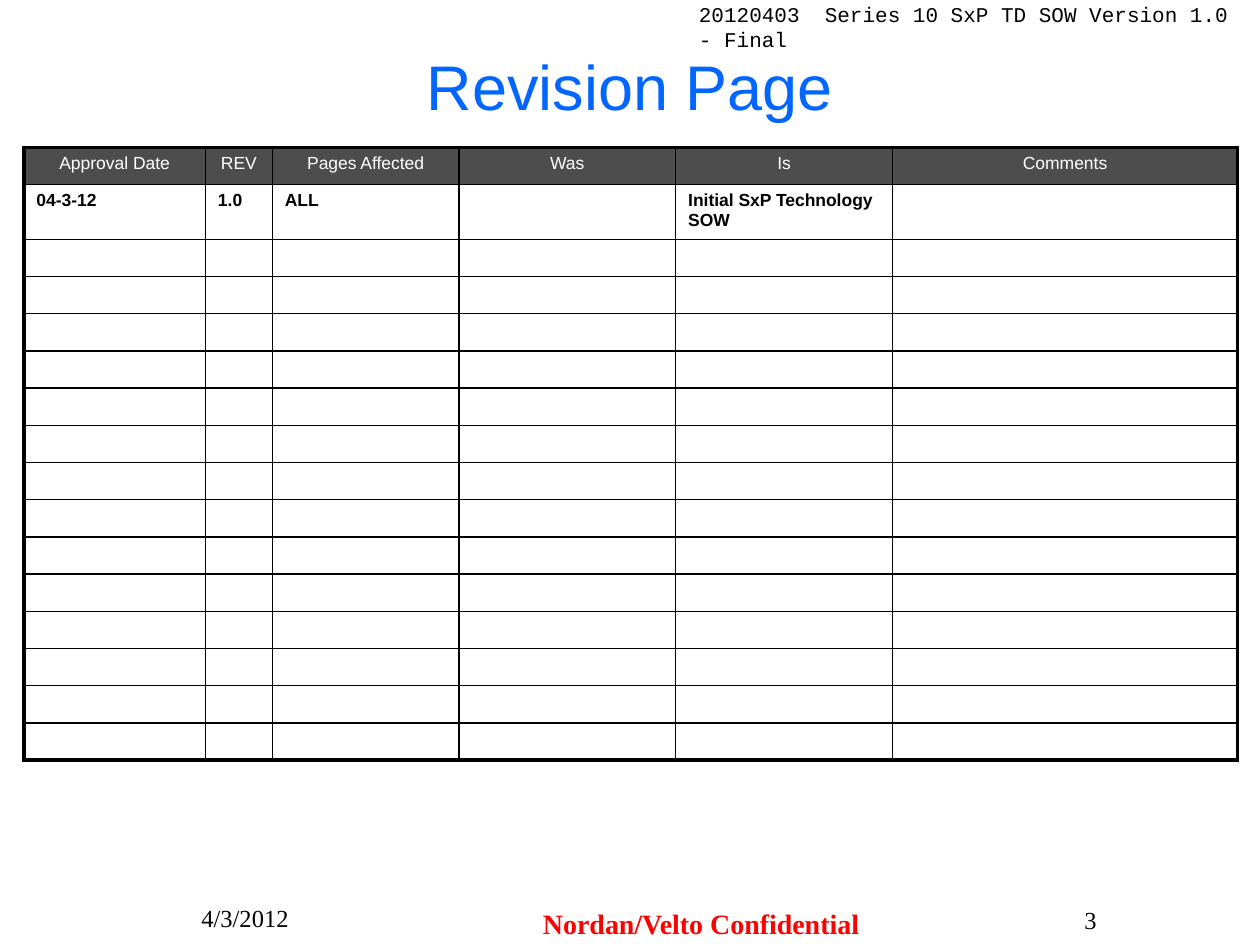
from dataclasses import dataclass

from lxml.etree import SubElement
from pptx import Presentation
from pptx.dml.color import RGBColor as Color
from pptx.enum.text import MSO_ANCHOR as Anchor, PP_ALIGN as Align
from pptx.oxml.ns import qn
from pptx.util import Cm, Pt


@dataclass(frozen=True)
class Theme:
    """Colours, fonts and type sizes of the deck."""

    black: str = "000000"
    white: str = "FFFFFF"
    blue: str = "0066FF"
    red: str = "FF0000"
    grey: str = "4D4D4D"
    sans: str = "Arial"
    serif: str = "Times New Roman"
    mono: str = "Courier New"
    title: int = 36
    notice: int = 16
    footer: int = 14
    header: int = 12
    cell: int = 10
    frame_line: float = 2.25
    grid_line: float = 1


THEME = Theme()
COLUMN_WIDTHS = [3.66, 1.35, 3.76, 4.37, 4.37, 6.96]
HEADINGS = ["Approval Date", "REV", "Pages Affected", "Was", "Is", "Comments"]
REVISION = ["04-3-12", "1.0", "ALL", "", "Initial SxP Technology SOW", ""]
BLANK_ROWS = 14
ROW_HEIGHT = 0.75
REVISION_HEIGHT = 1.06


def write(frame, text, size, name, color, align=Align.LEFT, bold=False):
    """Put one formatted paragraph in a text frame."""
    para = frame.paragraphs[0]
    para.alignment = align
    span = para.add_run()
    span.text = text
    for key, value in {"size": Pt(size), "name": name, "bold": bold}.items():
        setattr(span.font, key, value)
    span.font.color.rgb = Color.from_string(color)


def add_text(page, place, text, size, name, color, **format_values):
    """Add a wrapped text box at left, top, width, height in centimetres."""
    box = page.shapes.add_textbox(*map(Cm, place))
    box.text_frame.word_wrap = True
    write(box.text_frame, text, size, name, color, **format_values)


def set_title(page, text):
    """Place and format the title placeholder."""
    title = page.shapes.title
    place = {"left": 1.27, "top": 0.76, "width": 22.86, "height": 1.9}
    for key, value in place.items():
        setattr(title, key, Cm(value))
    title.text_frame.vertical_anchor = Anchor.MIDDLE
    write(title.text_frame, text, THEME.title, THEME.sans, THEME.blue, Align.CENTER)


def set_borders(cell, outer_sides):
    """Draw the cell's four borders, heavier on the table's outer sides."""
    properties = cell._tc.get_or_add_tcPr()
    for index, side in enumerate("LRTB"):
        points = THEME.frame_line if side in outer_sides else THEME.grid_line
        line = SubElement(properties, qn(f"a:ln{side}"), w=str(Pt(points)))
        fill = SubElement(line, qn("a:solidFill"))
        SubElement(fill, qn("a:srgbClr"), val=THEME.black)
        properties.insert(index, line)


def fill_cell(cell, text, is_heading):
    """Set the fill and the text of one cell."""
    cell.fill.solid()
    cell.fill.fore_color.rgb = Color.from_string(THEME.grey if is_heading else THEME.white)
    if text:
        write(
            cell.text_frame, text, THEME.cell, THEME.sans,
            THEME.white if is_heading else THEME.black,
            Align.CENTER if is_heading else Align.LEFT, not is_heading,
        )
    else:
        para = cell.text_frame.paragraphs[0]
        SubElement(para._p, qn("a:endParaRPr"), sz=str(THEME.cell * 100))


def add_revision_table(page):
    """Add the revision history with its blank rows."""
    rows = [HEADINGS, REVISION] + [[""] * len(HEADINGS)] * BLANK_ROWS
    heights = [ROW_HEIGHT, REVISION_HEIGHT] + [ROW_HEIGHT] * BLANK_ROWS
    place = (0.48, 2.97, sum(COLUMN_WIDTHS), sum(heights))
    table = page.shapes.add_table(len(rows), len(HEADINGS), *map(Cm, place)).table
    table.first_row = table.horz_banding = False
    for column, width in zip(table.columns, COLUMN_WIDTHS):
        column.width = Cm(width)
    for row, height in zip(table.rows, heights):
        row.height = Cm(height)
    last_row, last_column = len(rows) - 1, len(HEADINGS) - 1
    for r, texts in enumerate(rows):
        for c, text in enumerate(texts):
            cell = table.cell(r, c)
            fill_cell(cell, text, r == 0)
            edges = {"L": c == 0, "R": c == last_column, "T": r == 0, "B": r == last_row}
            set_borders(cell, [side for side, outer in edges.items() if outer])


def main():
    """Build and save the revision page."""
    deck = Presentation()
    deck.slide_width, deck.slide_height = Cm(25.4), Cm(19.05)
    page = deck.slides.add_slide(deck.slide_layouts[5])
    add_text(page, (13.84, -0.1, 11.51, 0.76),
             "20120403  Series 10 SxP TD SOW Version 1.0 - Final",
             THEME.header, THEME.mono, THEME.black)
    add_text(page, (3.81, 18.08, 5.92, 0.97), "4/3/2012",
             THEME.footer, THEME.serif, THEME.black)
    add_text(page, (10.11, 18.16, 8.05, 0.89), "Nordan/Velto Confidential",
             THEME.notice, THEME.serif, THEME.red, align=Align.CENTER, bold=True)
    add_text(page, (18.85, 18.11, 3.51, 0.94), "3",
             THEME.footer, THEME.serif, THEME.black, align=Align.RIGHT)
    set_title(page, "Revision Page")
    add_revision_table(page)
    deck.save("out.pptx")


if __name__ == "__main__":
    main()
